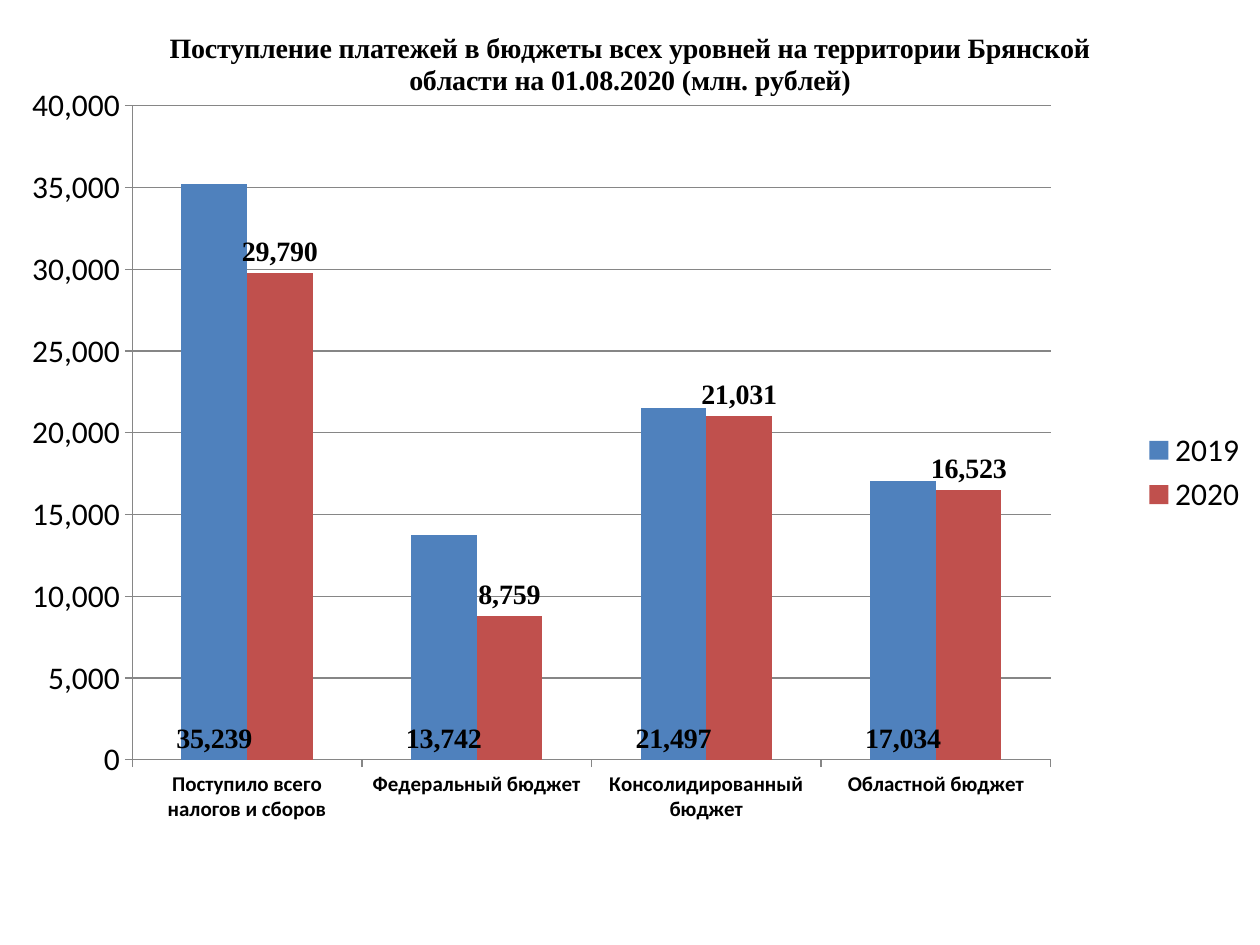
from lxml import etree
from pptx import Presentation
from pptx.chart.data import CategoryChartData
from pptx.dml.color import RGBColor
from pptx.enum.chart import (XL_CHART_TYPE, XL_LABEL_POSITION,
                             XL_LEGEND_POSITION, XL_TICK_MARK)
from pptx.oxml.ns import qn
from pptx.util import Emu, Pt

PX = 7258  # EMU in one px, at 126 px to the inch
PAGE_BOX = (0, 0, 1260, 945)
COLUMNS = XL_CHART_TYPE.COLUMN_CLUSTERED
LEGEND_RIGHT = XL_LEGEND_POSITION.RIGHT
TICK_OUT, TICK_NONE = XL_TICK_MARK.OUTSIDE, XL_TICK_MARK.NONE
INSIDE_BASE = XL_LABEL_POSITION.INSIDE_BASE
OUTSIDE_END = XL_LABEL_POSITION.OUTSIDE_END

BODY, SERIF = "Calibri", "Times New Roman"
BLACK, GREY = "000000", "868686"
NUMBER_FORMAT = "#,##0"
TITLE = ("Поступление платежей в бюджеты всех уровней на территории "
         "Брянской области на 01.08.2020 (млн. рублей)")
CATEGORIES = ["Поступило всего налогов и сборов", "Федеральный бюджет",
              "Консолидированный бюджет", "Областной бюджет"]
SERIES = [
    ("2019", [35239, 13742, 21497, 17034], "4F81BD", INSIDE_BASE),
    ("2020", [29790, 8759, 21031, 16523], "C0504D", OUTSIDE_END),
]
PLOT_LAYOUT = {"x": 0.105, "y": 0.112, "w": 0.729, "h": 0.692}


def rgb(color):
    return RGBColor.from_string(color)


def set_font(font, size, name=BODY, bold=False):
    font.size, font.name, font.bold = Pt(size), name, bold
    font.color.rgb = rgb(BLACK)


def set_line(line):
    line.color.rgb = rgb(GREY)
    line.width = Pt(0.75)


def place_plot(chart, fractions):
    """Fix the inner plot area at fractions of the chart's size."""
    plot_area = chart.element.find(".//" + qn("c:plotArea"))
    layout = plot_area.find(qn("c:layout"))
    if layout is None:
        layout = etree.Element(qn("c:layout"))
        plot_area.insert(0, layout)
    manual = etree.SubElement(layout, qn("c:manualLayout"))
    settings = [("layoutTarget", "inner"), ("xMode", "edge"), ("yMode", "edge")]
    for tag, value in settings + list(fractions.items()):
        etree.SubElement(manual, qn("c:" + tag)).set("val", str(value))


def style_axes(chart):
    for axis in (chart.category_axis, chart.value_axis):
        axis.major_tick_mark = TICK_OUT
        axis.minor_tick_mark = TICK_NONE
        set_line(axis.format.line)
    set_font(chart.category_axis.tick_labels.font, 12, bold=True)
    values = chart.value_axis
    values.minimum_scale, values.maximum_scale, values.major_unit = 0, 40000, 5000
    set_font(values.tick_labels.font, 18)
    values.tick_labels.number_format = NUMBER_FORMAT
    values.tick_labels.number_format_is_linked = False
    values.has_major_gridlines = True
    set_line(values.major_gridlines.format.line)


def style_series(series, color, position):
    series.format.fill.solid()
    series.format.fill.fore_color.rgb = rgb(color)
    series.invert_if_negative = False
    labels = series.data_labels
    labels.show_value = True
    labels.position = position
    labels.number_format = NUMBER_FORMAT
    labels.number_format_is_linked = False
    set_font(labels.font, 16, SERIF, bold=True)


def add_budget_chart(page, box):
    data = CategoryChartData(number_format=NUMBER_FORMAT)
    data.categories = CATEGORIES
    for name, values, _, _ in SERIES:
        data.add_series(name, values)
    frame = page.shapes.add_chart(COLUMNS, *(Emu(n * PX) for n in box), data)
    chart = frame.chart
    set_font(chart.font, 18)

    chart.has_title = True
    para = chart.chart_title.text_frame.paragraphs[0]
    para.add_run().text = TITLE
    set_font(para.font, 16, SERIF, bold=True)
    chart.chart_title.include_in_layout = False

    chart.has_legend = True
    chart.legend.position = LEGEND_RIGHT
    chart.legend.include_in_layout = False
    set_font(chart.legend.font, 18)

    plot = chart.plots[0]
    plot.gap_width, plot.overlap = 150, 0
    plot.vary_by_categories = False
    for series, (_, _, color, position) in zip(plot.series, SERIES):
        style_series(series, color, position)
    style_axes(chart)
    place_plot(chart, PLOT_LAYOUT)


def main():
    deck = Presentation()
    deck.slide_width, deck.slide_height = (Emu(n * PX) for n in PAGE_BOX[2:])
    page = deck.slides.add_slide(deck.slide_layouts[6])
    add_budget_chart(page, PAGE_BOX)
    deck.save("out.pptx")


if __name__ == "__main__":
    main()
